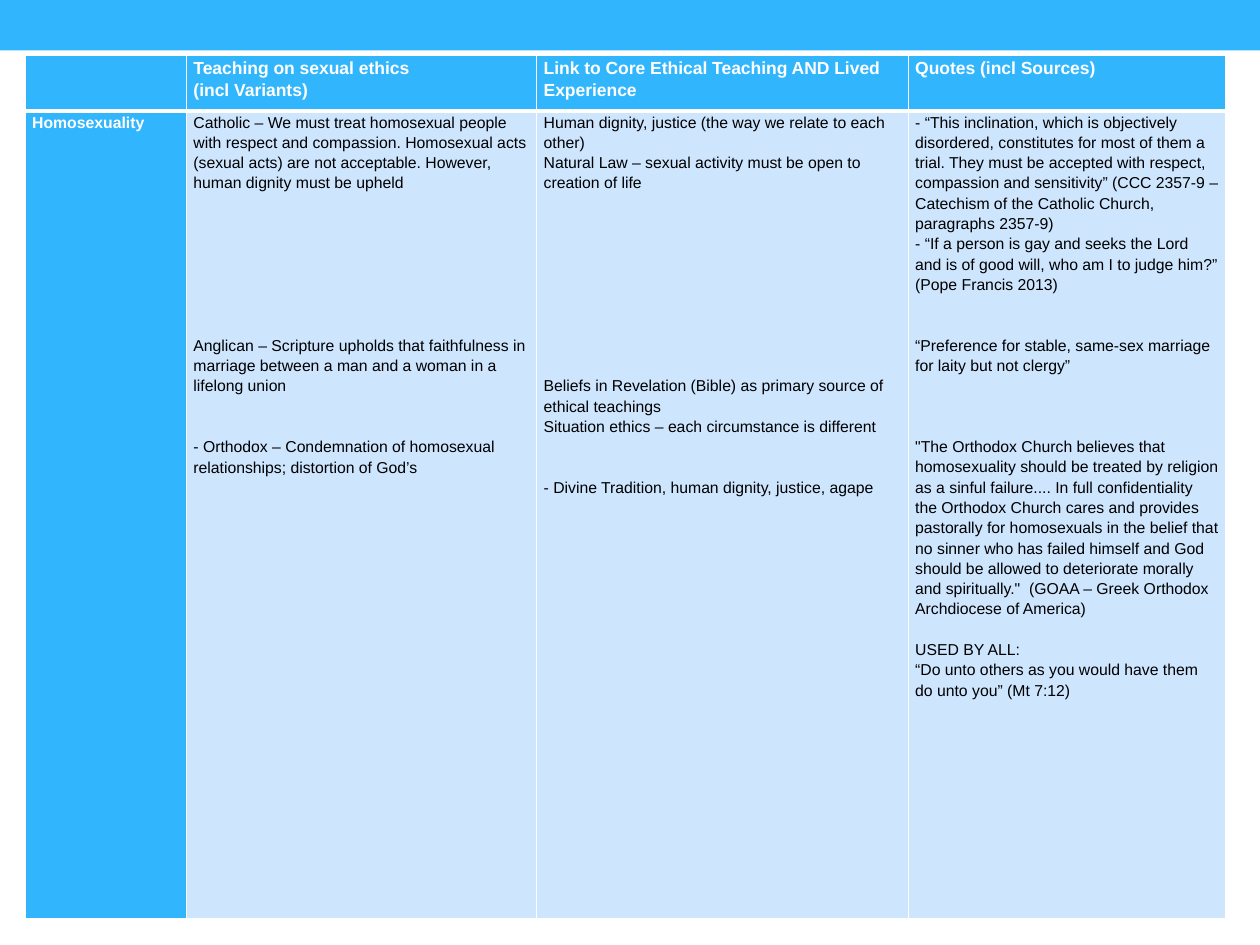
from itertools import product

from lxml.etree import SubElement
from pptx import Presentation
from pptx.dml.color import RGBColor
from pptx.enum.shapes import MSO_SHAPE
from pptx.oxml.ns import qn
from pptx.util import Cm, Pt

THEME = {
    "font": "Arial",
    "accent": "31B6FD",
    "tint": "CEE5FE",
    "light": "FFFFFF",
    "dark": "000000",
    "header_size": 10,
    "body_size": 9,
    "line_spacing": 1.15,
    "blank_line": 11.6,
    "rule": 1,
    "header_rule": 3,
}

HEADERS = [
    [],
    [("Teaching on sexual ethics", 0), ("(incl Variants)", 0)],
    [("Link to Core Ethical Teaching AND Lived Experience", 0)],
    [("Quotes (incl Sources)", 0)],
]
# Each entry pairs a paragraph with the number of lines left open above it.
HOMOSEXUALITY = [
    [("Homosexuality", 0)],
    [
        ("Catholic – We must treat homosexual people with respect and compassion. "
         "Homosexual acts (sexual acts) are not acceptable. However, human dignity "
         "must be upheld", 0),
        ("Anglican – Scripture upholds that faithfulness in marriage between a man "
         "and a woman in a lifelong union", 7),
        ("- Orthodox – Condemnation of homosexual relationships; distortion of God’s", 2),
    ],
    [
        ("Human dignity, justice (the way we relate to each other)", 0),
        ("Natural Law – sexual activity must be open to creation of life", 0),
        ("Beliefs in Revelation (Bible) as primary source of ethical teachings", 9),
        ("Situation ethics – each circumstance is different", 0),
        ("- Divine Tradition, human dignity, justice, agape", 2),
    ],
    [
        ("- “This inclination, which is objectively disordered, constitutes for most "
         "of them a trial. They must be accepted with respect, compassion and "
         "sensitivity” (CCC 2357-9 – Catechism of the Catholic Church, paragraphs "
         "2357-9)", 0),
        ("- “If a person is gay and seeks the Lord and is of good will, who am I to "
         "judge him?” (Pope Francis 2013)", 0),
        ("“Preference for stable, same-sex marriage for laity but not clergy”", 2),
        ('"The Orthodox Church believes that homosexuality should be treated by '
         "religion as a sinful failure.... In full confidentiality the Orthodox "
         "Church cares and provides pastorally for homosexuals in the belief that no "
         "sinner who has failed himself and God should be allowed to deteriorate "
         'morally and spiritually."  (GOAA – Greek Orthodox Archdiocese of America)', 3),
        ("USED BY ALL:", 1),
        ("“Do unto others as you would have them do unto you” (Mt 7:12)", 0),
    ],
]
ROWS = [HEADERS, HOMOSEXUALITY]
COLUMN_WIDTHS = [3.25, 7.06, 7.49, 6.4]
ROW_HEIGHTS = [1.12, 16.28]
TABLE_LEFT, TABLE_TOP = 0.51, 1.12
BAR_HEIGHT = 1.02
CELL_MARGIN = 0.14


def color(name):
    return RGBColor.from_string(THEME[name])


def write_text(paragraph, text, *, size, ink, bold=False, lines_above=0):
    paragraph.line_spacing = THEME["line_spacing"]
    paragraph.space_before = Pt(lines_above * THEME["blank_line"])
    run = paragraph.add_run()
    run.text = text
    run.font.name = THEME["font"]
    run.font.size = Pt(size)
    run.font.bold = bold
    run.font.color.rgb = color(ink)


def set_borders(cell, widths):
    properties = cell._tc.get_or_add_tcPr()
    for side, width in widths.items():
        line = SubElement(properties, qn(f"a:ln{side}"), w=str(Pt(width)))
        fill = SubElement(line, qn("a:solidFill"))
        SubElement(fill, qn("a:srgbClr"), val=THEME["light"])


def format_cell(cell, paragraphs, *, is_header, is_label):
    emphasized = is_header or is_label
    widths = dict.fromkeys("LRTB", THEME["rule"])
    widths["B" if is_header else "T"] = THEME["header_rule"]
    set_borders(cell, widths)
    cell.fill.solid()
    cell.fill.fore_color.rgb = color("accent" if emphasized else "tint")
    cell.margin_left = cell.margin_right = Cm(CELL_MARGIN)
    cell.margin_top = cell.margin_bottom = 0
    frame = cell.text_frame
    for index, (text, lines_above) in enumerate(paragraphs):
        write_text(
            frame.add_paragraph() if index else frame.paragraphs[0],
            text,
            size=THEME["header_size" if is_header else "body_size"],
            ink="light" if emphasized else "dark",
            bold=emphasized,
            lines_above=lines_above,
        )


def add_bar(slide, width):
    bar = slide.shapes.add_shape(MSO_SHAPE.RECTANGLE, 0, 0, width, Cm(BAR_HEIGHT))
    bar.shadow.inherit = False
    bar.fill.solid()
    bar.fill.fore_color.rgb = color("accent")
    bar.line.fill.background()


def add_ethics_table(slide):
    table = slide.shapes.add_table(
        len(ROWS), len(COLUMN_WIDTHS), Cm(TABLE_LEFT), Cm(TABLE_TOP),
        Cm(sum(COLUMN_WIDTHS)), Cm(sum(ROW_HEIGHTS)),
    ).table
    for column, width in zip(table.columns, COLUMN_WIDTHS):
        column.width = Cm(width)
    for row, height in zip(table.rows, ROW_HEIGHTS):
        row.height = Cm(height)
    for row, column in product(range(len(ROWS)), range(len(COLUMN_WIDTHS))):
        format_cell(table.cell(row, column), ROWS[row][column],
                    is_header=row == 0, is_label=column == 0)


def main():
    presentation = Presentation()
    presentation.slide_width, presentation.slide_height = Cm(25.4), Cm(19.05)
    slide = presentation.slides.add_slide(presentation.slide_layouts[6])
    add_bar(slide, presentation.slide_width)
    add_ethics_table(slide)
    presentation.save("out.pptx")


if __name__ == "__main__":
    main()
